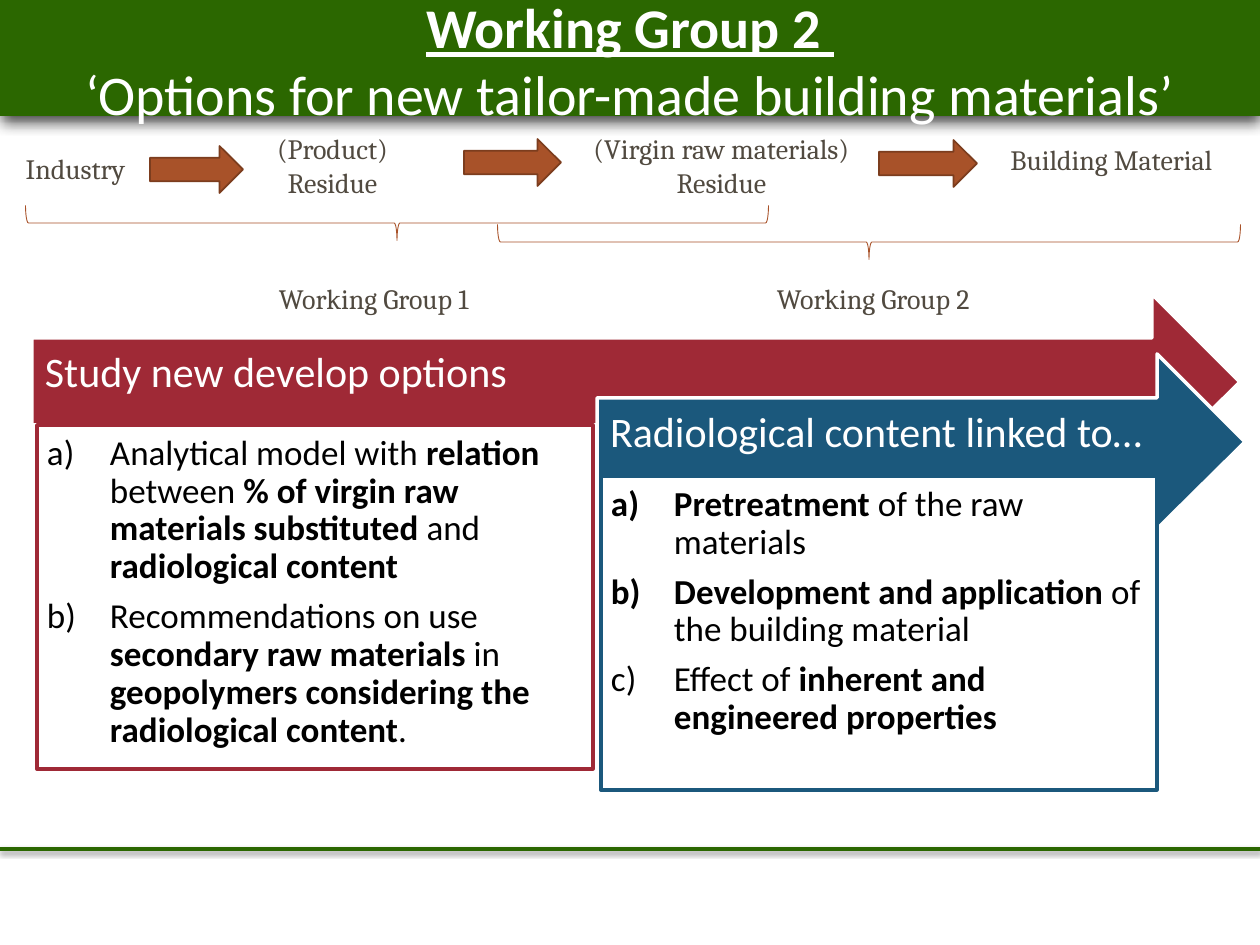
from lxml import etree
from pptx import Presentation
from pptx.dml.color import RGBColor
from pptx.enum.shapes import MSO_CONNECTOR, MSO_SHAPE
from pptx.enum.text import MSO_ANCHOR, MSO_AUTO_SIZE, PP_ALIGN
from pptx.oxml.ns import qn
from pptx.util import Emu, Pt

CENTER, LEFT = PP_ALIGN.CENTER, PP_ALIGN.LEFT
MIDDLE, TOP = MSO_ANCHOR.MIDDLE, MSO_ANCHOR.TOP
EMU_PER_PX = 914400 / 126

COLORS = {
    "green": "2B6700", "white": "FFFFFF", "black": "000000", "label": "514A40",
    "rust": "A85229", "rust_edge": "7C3D1E", "red": "9F2936", "blue": "1B587C",
}

TITLE = ("Working Group 2 ", "‘Options for new tailor-made building materials’")
FLOW_LABELS = [
    (["Industry"], (-54, 145, 253, 47)),
    (["(Product)", "Residue"], (203, 125, 253, 81)),
    (["(Virgin raw materials)", "Residue"], (460, 125, 517, 81)),
    (["Building Material"], (982, 136, 253, 47)),
]
FLOW_ARROWS = [(150, 146, 93, 47), (464, 139, 97, 47), (879, 140, 98, 47)]
BRACE_LENGTH, BRACE_DEPTH = 743, 35
GROUPS = [
    ("Working Group 1", (397, 223), (266, 275, 232, 47)),
    ("Working Group 2", (869, 242), (764, 275, 232, 47)),
]
HEAD_HEIGHT, HEAD_WIDTH, SHAFT_INSET = 175, 88, 44
PANELS = [
    {
        "heading": "Study new develop options", "color": "red",
        "arrow": (32, 294, 1208), "box": (37, 425, 556, 344),
        "items": [
            [("Analytical model with ", False), ("relation", True), (" between ", False),
             ("% of virgin raw materials substituted ", True), ("and ", False),
             ("radiological content", True)],
            [("Recommendations on use ", False), ("secondary raw materials ", True),
             ("in ", False), ("geopolymers considering the radiological content", True),
             (".", False)],
        ],
    },
    {
        "heading": "Radiological content linked to…", "color": "blue",
        "arrow": (597, 354, 648), "box": (601, 476, 556, 314),
        "items": [
            [("Pretreatment", True), (" of the raw materials", False)],
            [("Development and application", True), (" of the building material", False)],
            [("Effect of ", False), ("inherent and engineered properties", True)],
        ],
    },
]


def px(value):
    return Emu(round(value * EMU_PER_PX))


def rgb(name):
    return RGBColor.from_string(COLORS[name])


def add_run(paragraph, text, size, font, color, bold=False, underline=False):
    run = paragraph.add_run()
    run.text = text
    run.font.size, run.font.name = Pt(size), font
    run.font.bold, run.font.underline = bold, underline
    run.font.color.rgb = rgb(color)


def set_frame(frame, margins, anchor, wrap=True):
    (frame.margin_left, frame.margin_top,
     frame.margin_right, frame.margin_bottom) = map(px, margins)
    frame.vertical_anchor, frame.word_wrap = anchor, wrap
    frame.auto_size = MSO_AUTO_SIZE.NONE


def style(shape, fill, line, width):
    shape.shadow.inherit = False
    if fill:
        shape.fill.solid()
        shape.fill.fore_color.rgb = rgb(fill)
    else:
        shape.fill.background()
    if line:
        shape.line.color.rgb = rgb(line)
        shape.line.width = Pt(width)
    else:
        shape.line.fill.background()


def add_preset(shapes, preset, place, fill, line=None, width=0):
    shape = shapes.add_shape(preset, *map(px, place))
    style(shape, fill, line, width)
    return shape


def add_shadow(shape, alpha, blur, distance):
    properties = shape.element.spPr
    for old in properties.findall(qn("a:effectLst")):
        properties.remove(old)
    effects = etree.SubElement(properties, qn("a:effectLst"))
    shadow = etree.SubElement(effects, qn("a:outerShdw"), blurRad=str(Pt(blur)),
                              dist=str(Pt(distance)), dir="5400000", rotWithShape="0")
    color = etree.SubElement(shadow, qn("a:srgbClr"), val=COLORS["black"])
    etree.SubElement(color, qn("a:alpha"), val=str(alpha * 1000))


def add_label(shapes, lines, place, align, margin_left, wrap):
    frame = shapes.add_textbox(*map(px, place)).text_frame
    set_frame(frame, (margin_left, 6, 13, 6), MIDDLE, wrap)
    for index, line in enumerate(lines):
        paragraph = frame.add_paragraph() if index else frame.paragraphs[0]
        paragraph.alignment = align
        add_run(paragraph, line, 16, "Cambria", "label")


def add_header(slide):
    shapes, title = slide.shapes, slide.shapes.title
    band = add_preset(shapes, MSO_SHAPE.RECTANGLE, (0, 0, 1260, 116), "green")
    add_shadow(band, 72, 8, 3)
    band.element.getparent().insert(2, band.element)
    rule = shapes.add_connector(MSO_CONNECTOR.STRAIGHT, px(0), px(849), px(1260), px(849))
    rule.line.color.rgb = rgb("green")
    rule.line.width = Pt(2)
    add_shadow(rule, 38, 3.1, 1.6)
    title.left, title.top, title.width, title.height = map(px, (0, -5, 1260, 130))
    set_frame(title.text_frame, (13, 6, 13, 6), MIDDLE)
    paragraph = title.text_frame.paragraphs[0]
    paragraph.alignment = CENTER
    add_run(paragraph, TITLE[0], 32, "Calibri", "white", bold=True, underline=True)
    paragraph.add_line_break()
    add_run(paragraph, TITLE[1], 32, "Calibri", "white")


def add_flow(shapes):
    for lines, place in FLOW_LABELS:
        add_label(shapes, lines, place, CENTER, 19, True)
    for place in FLOW_ARROWS:
        add_preset(shapes, MSO_SHAPE.RIGHT_ARROW, place, "rust", "rust_edge", 1)
    for name, (center_x, center_y), place in GROUPS:
        brace_place = (center_x - BRACE_DEPTH / 2, center_y - BRACE_LENGTH / 2,
                       BRACE_DEPTH, BRACE_LENGTH)
        brace = add_preset(shapes, MSO_SHAPE.RIGHT_BRACE, brace_place, None, "rust", 0.5)
        brace.rotation = 90
        add_label(shapes, [name], place, LEFT, 13, False)


def add_panel(shapes, panel):
    left, top, width = panel["arrow"]
    right, bottom = left + width, top + HEAD_HEIGHT
    neck, upper, lower = right - HEAD_WIDTH, top + SHAFT_INSET, bottom - SHAFT_INSET
    builder = shapes.build_freeform(left, upper, scale=EMU_PER_PX)
    builder.add_line_segments([
        (neck, upper), (neck, top), (right, top + HEAD_HEIGHT / 2),
        (neck, bottom), (neck, lower), (left, lower),
    ])
    arrow = builder.convert_to_shape()
    style(arrow, panel["color"], "white", 2)
    set_frame(arrow.text_frame, (13, 57, 79, 72), MIDDLE)
    paragraph = arrow.text_frame.paragraphs[0]
    paragraph.alignment, paragraph.line_spacing = LEFT, 0.9
    add_run(paragraph, panel["heading"], 24, "Calibri", "white")

    box = add_preset(shapes, MSO_SHAPE.RECTANGLE, panel["box"], "white", panel["color"], 2)
    frame = box.text_frame
    set_frame(frame, (10, 10, 10, 10), TOP)
    for index, runs in enumerate(panel["items"]):
        paragraph = frame.add_paragraph() if index else frame.paragraphs[0]
        properties = paragraph._p.get_or_add_pPr()
        properties.set("marL", str(px(63)))
        properties.set("indent", str(px(-63)))
        etree.SubElement(properties, qn("a:buAutoNum"), type="alphaLcParenR")
        paragraph.alignment, paragraph.line_spacing = LEFT, 0.9
        paragraph.space_after = Pt(7)
        for text, bold in runs:
            add_run(paragraph, text, 20, "Calibri", "black", bold)


def main():
    presentation = Presentation()
    presentation.slide_width, presentation.slide_height = px(1260), px(945)
    slide = presentation.slides.add_slide(presentation.slide_layouts[5])
    add_header(slide)
    add_flow(slide.shapes)
    for panel in PANELS:
        add_panel(slide.shapes, panel)
    presentation.save("out.pptx")


if __name__ == "__main__":
    main()
